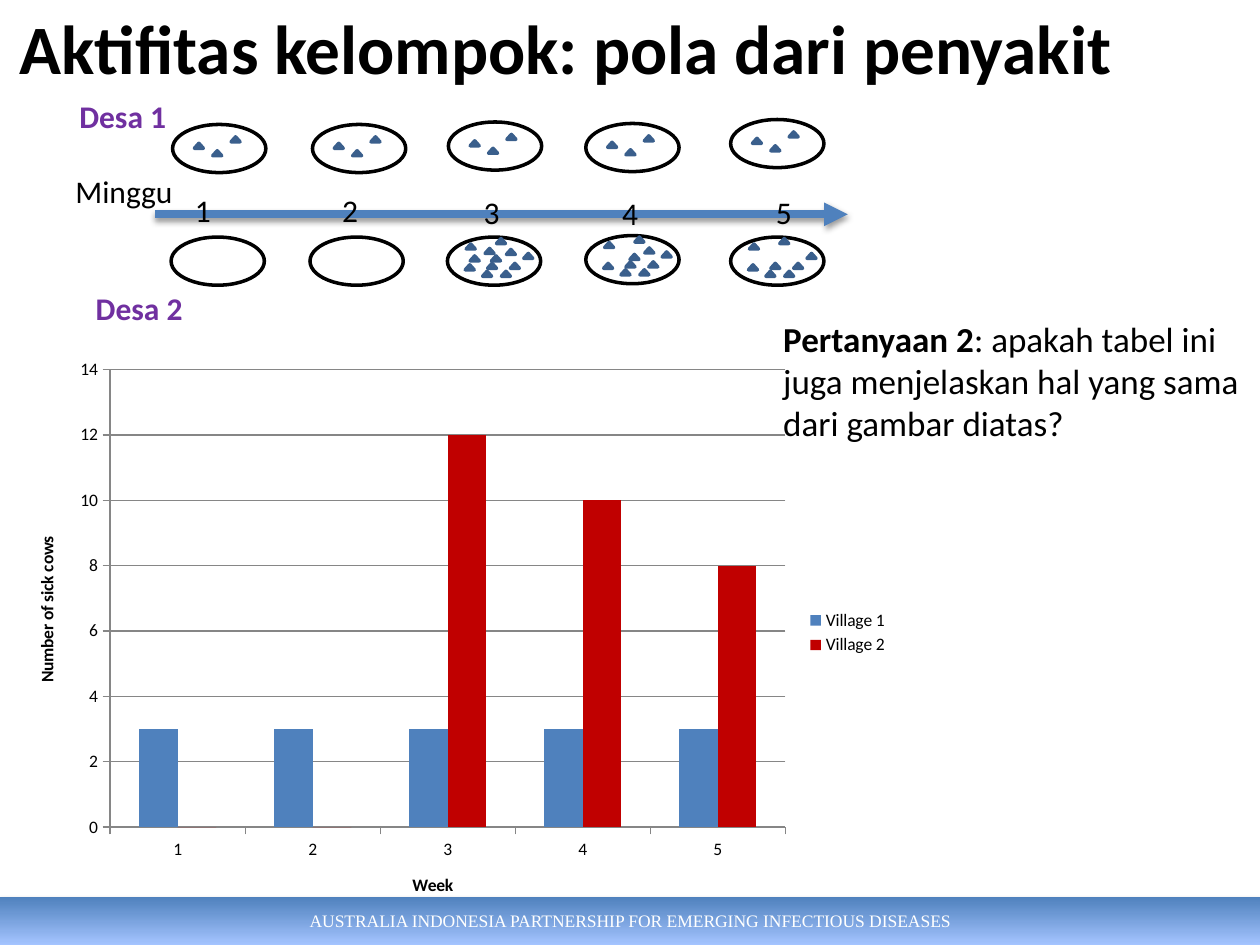
from lxml import etree
from pptx import Presentation
from pptx.chart.data import CategoryChartData
from pptx.dml.color import RGBColor
from pptx.enum.chart import XL_CHART_TYPE, XL_LEGEND_POSITION, XL_TICK_MARK
from pptx.enum.shapes import MSO_CONNECTOR, MSO_SHAPE
from pptx.enum.text import MSO_ANCHOR, PP_ALIGN
from pptx.oxml import parse_xml
from pptx.oxml.ns import nsdecls, qn
from pptx.util import Cm, Pt

COLUMNS = XL_CHART_TYPE.COLUMN_CLUSTERED
LEGEND_RIGHT = XL_LEGEND_POSITION.RIGHT
TICK_OUT = XL_TICK_MARK.OUTSIDE
STRAIGHT = MSO_CONNECTOR.STRAIGHT
RECT, OVAL, TRIANGLE = MSO_SHAPE.RECTANGLE, MSO_SHAPE.OVAL, MSO_SHAPE.ISOSCELES_TRIANGLE
TOP, MIDDLE = MSO_ANCHOR.TOP, MSO_ANCHOR.MIDDLE
CENTER = PP_ALIGN.CENTER

BLACK, WHITE, BLUE, NAVY = "000000", "FFFFFF", "4F81BD", "3A5F8C"
PURPLE, RED, GREY = "7030A0", "C00000", "868686"

WEEKS = ["1", "2", "3", "4", "5"]
SICK_1 = [3, 3, 3, 3, 3]
SICK_2 = [0, 0, 12, 10, 8]

# Cow positions inside a herd; a herd of n cows uses the first n of its list.
COWS_1 = [(0.44, 0.38), (0.81, 0.53), (1.18, 0.25)]
COWS_2 = [(0.81, 0.53), (1.27, 0.53), (1.09, 0.69), (0.36, 0.56), (0.38, 0.14),
          (0.99, 0.03), (1.54, 0.33), (0.71, 0.69), (1.19, 0.25), (0.89, 0.38),
          (0.46, 0.38), (0.76, 0.23)]

# Positions within the timeline box, one per week.
HERDS_1 = [(2.21, 0.68), (5.03, 0.68), (7.77, 0.63), (10.54, 0.66), (13.46, 0.58)]
HERDS_2 = [(2.18, 2.95), (4.98, 2.95), (7.75, 2.95), (10.54, 2.92), (13.46, 2.95)]
NUMBERS = [(2.41, 1.9), (5.38, 1.9), (8.23, 1.93), (11.02, 1.95), (14.12, 1.93)]


def rgb(color):
    return RGBColor.from_string(color)


def style_font(font, size, color=BLACK, bold=False, name="Calibri"):
    font.size, font.bold, font.name = Pt(size), bold, name
    font.color.rgb = rgb(color)


def add_text(s, x, y, w, h, parts, size, color=BLACK, wrap=True, anchor=TOP):
    """Place a text box; parts is a list of (text, bold) runs."""
    tf = s.shapes.add_textbox(Cm(x), Cm(y), Cm(w), Cm(h)).text_frame
    tf.word_wrap = wrap
    tf.vertical_anchor = anchor
    for text, bold in parts:
        r = tf.paragraphs[0].add_run()
        r.text = text
        style_font(r.font, size, color, bold)


def add_filled(s, kind, x, y, w, h, fill, line):
    sp = s.shapes.add_shape(kind, Cm(x), Cm(y), Cm(w), Cm(h))
    sp.shadow.inherit = False
    sp.fill.solid()
    sp.fill.fore_color.rgb = rgb(fill)
    sp.line.color.rgb = rgb(line)
    sp.line.width = Pt(2)


def add_shadow(sp, blur, dist, opacity):
    """Give a shape or connector a soft shadow straight below it."""
    sp._element.spPr.append(parse_xml(
        f'<a:effectLst {nsdecls("a")}><a:outerShdw blurRad="{Pt(blur)}" '
        f'dist="{Pt(dist)}" dir="5400000" rotWithShape="0"><a:srgbClr val="{BLACK}">'
        f'<a:alpha val="{opacity * 1000}"/></a:srgbClr></a:outerShdw></a:effectLst>'))


def add_footer(s, x, y, w, h):
    sp = s.shapes.add_shape(RECT, Cm(x), Cm(y), Cm(w), Cm(h))
    sp.fill.gradient()
    sp.fill.gradient_angle = 270
    for stop, color in zip(sp.fill.gradient_stops, (BLUE, "A4C4FF")):
        stop.color.rgb = rgb(color)
    sp.line.fill.background()
    add_shadow(sp, 3.1, 1.8, 35)
    tf = sp.text_frame
    tf.text = "AUSTRALIA INDONESIA PARTNERSHIP FOR EMERGING INFECTIOUS DISEASES"
    tf.vertical_anchor = MIDDLE
    p = tf.paragraphs[0]
    p.alignment = CENTER
    style_font(p.runs[0].font, 10, WHITE, name="Times New Roman")


def add_arrow(s, x1, x2, y):
    line = s.shapes.add_connector(STRAIGHT, Cm(x1), Cm(y), Cm(x2), Cm(y))
    line.line.color.rgb = rgb(BLUE)
    line.line.width = Pt(4.5)
    etree.SubElement(line.line._get_or_add_ln(), qn("a:tailEnd"), type="triangle")
    add_shadow(line, 3.1, 1.6, 38)


def add_herd(s, x, y, cows):
    add_filled(s, OVAL, x, y, 1.88, 0.97, WHITE, BLACK)
    for dx, dy in cows:
        add_filled(s, TRIANGLE, x + dx, y + dy, 0.18, 0.1, BLUE, NAVY)


def add_timeline(s, x, y):
    """Show the herds of both villages above and below the arrow of weeks."""
    add_arrow(s, x + 1.85, x + 15.82, y + 2.49)
    add_text(s, x, y + 1.52, 3.15, 1.02, [("Minggu", False)], 18, wrap=False)
    for week, (dx, dy) in zip(WEEKS, NUMBERS):
        add_text(s, x + dx, y + dy, 0.79, 0.56, [(week, False)], 18, wrap=False)
    villages = [("Desa 1", (0.08, 0), HERDS_1, SICK_1, COWS_1),
                ("Desa 2", (0.41, 3.88), HERDS_2, SICK_2, COWS_2)]
    for name, (dx, dy), herds, counts, cows in villages:
        add_text(s, x + dx, y + dy, 2.87, 1.02, [(name, True)], 18, PURPLE, wrap=False)
        for (hx, hy), count in zip(herds, counts):
            add_herd(s, x + hx, y + hy, cows[:count])


def add_sick_chart(s, x, y, w, h):
    data = CategoryChartData()
    data.categories = WEEKS
    data.add_series("Village 1", SICK_1)
    data.add_series("Village 2", SICK_2)
    chart = s.shapes.add_chart(COLUMNS, Cm(x), Cm(y), Cm(w), Cm(h), data).chart
    style_font(chart.font, 10)
    chart.has_title = False
    chart.has_legend = True
    chart.legend.position = LEGEND_RIGHT
    chart.legend.include_in_layout = False

    plot = chart.plots[0]
    plot.gap_width, plot.overlap = 150, 0
    plot.vary_by_categories = False
    for series, color in zip(plot.series, (BLUE, RED)):
        series.format.fill.solid()
        series.format.fill.fore_color.rgb = rgb(color)

    value_axis = chart.value_axis
    value_axis.minimum_scale, value_axis.maximum_scale = 0, 14
    value_axis.major_unit = 2
    value_axis.major_gridlines.format.line.color.rgb = rgb(GREY)
    titles = [(chart.category_axis, "Week"), (value_axis, "Number of sick cows")]
    for axis, title in titles:
        axis.major_tick_mark = TICK_OUT
        axis.format.line.color.rgb = rgb(GREY)
        tf = axis.axis_title.text_frame
        tf.text = title
        style_font(tf.paragraphs[0].runs[0].font, 10, bold=True)

    area = chart._chartSpace.chart.plotArea
    for old in area.findall(qn("c:layout")):
        area.remove(old)
    area.insert(0, parse_xml(
        f'<c:layout {nsdecls("c")}><c:manualLayout><c:layoutTarget val="inner"/>'
        '<c:xMode val="edge"/><c:yMode val="edge"/><c:x val="0.11"/><c:y val="0.04"/>'
        '<c:w val="0.76"/><c:h val="0.8"/></c:manualLayout></c:layout>'))


def main():
    prs = Presentation()
    prs.slide_width, prs.slide_height = Cm(25.4), Cm(19.05)
    s = prs.slides.add_slide(prs.slide_layouts[6])
    add_footer(s, 0, 18.08, 25.4, 0.97)
    add_text(s, 0.15, -0.03, 22.86, 1.96,
             [("Aktifitas kelompok: pola dari penyakit", True)], 39.6, anchor=MIDDLE)
    add_timeline(s, 1.27, 1.83)
    add_sick_chart(s, 0.25, 6.99, 17.91, 11.53)
    add_text(s, 15.54, 6.27, 9.86, 2.82,
             [("Pertanyaan 2", True),
              (": apakah tabel ini juga menjelaskan hal yang sama dari gambar diatas?", False)],
             20)
    prs.save("out.pptx")


if __name__ == "__main__":
    main()
